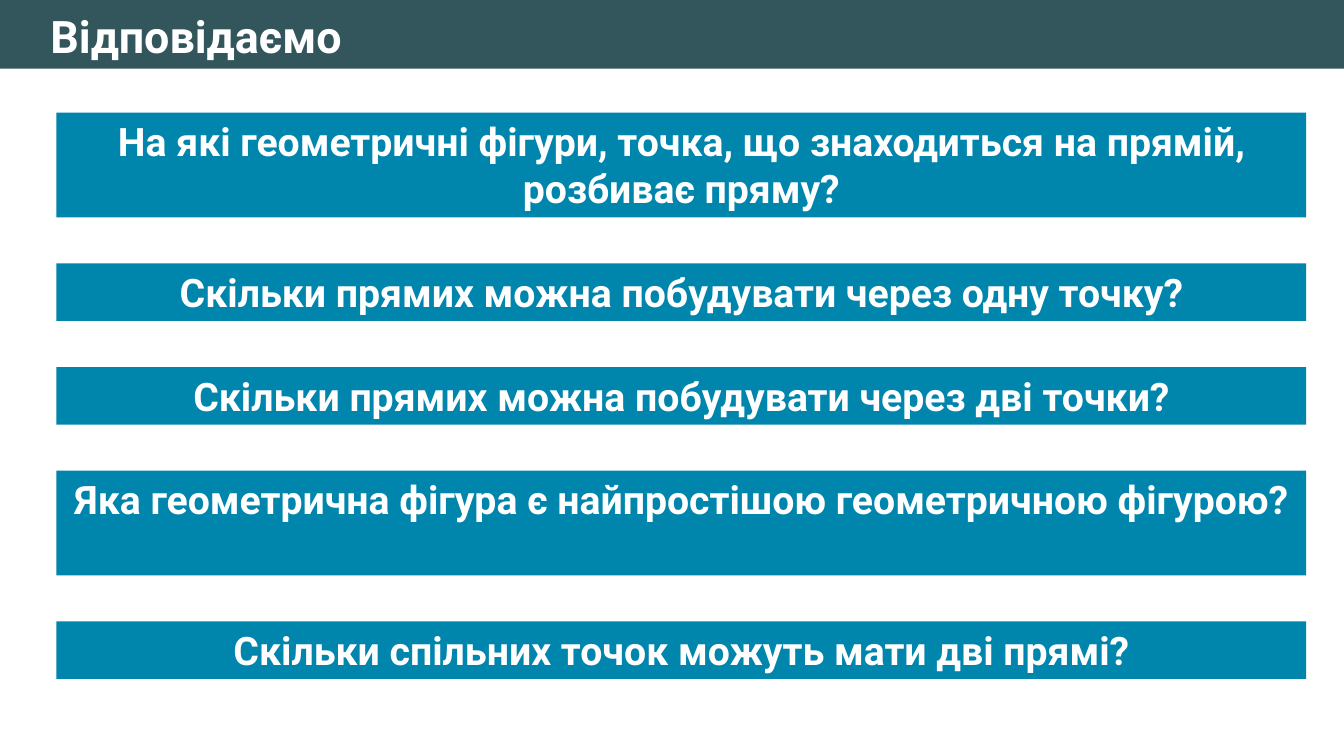
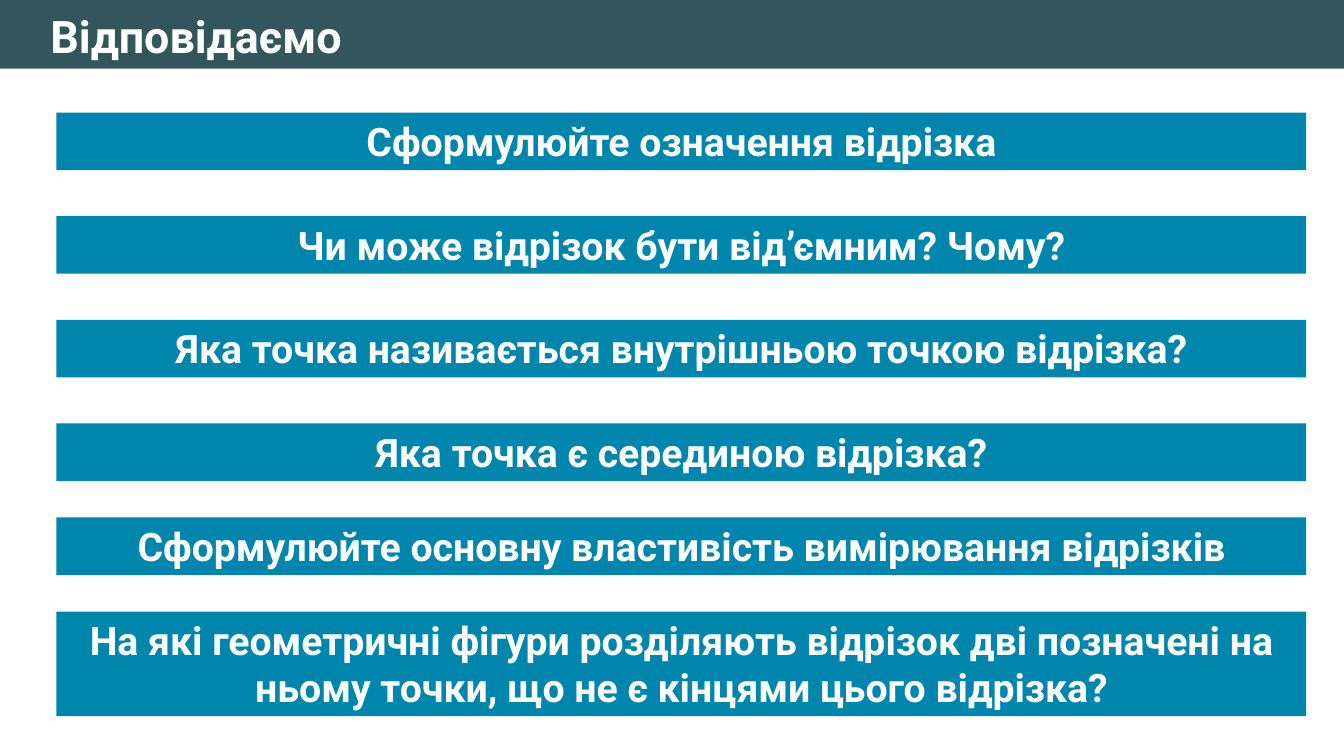
from pptx import Presentation
from pptx.dml.color import RGBColor
from pptx.enum.shapes import MSO_SHAPE as Shape
from pptx.enum.text import MSO_ANCHOR as Anchor, PP_ALIGN as Align
from pptx.util import Cm, Pt

TITLE = "Відповідаємо"
FONT = "Roboto"
WHITE, HEADER, CARD = "FFFFFF", "33565D", "0085AD"
SLIDE_WIDTH, SLIDE_HEIGHT = 33.87, 19.05
HEADER_HEIGHT = 1.73
CARD_LEFT, CARD_TOP, CARD_WIDTH = 1.42, 2.84, 31.5
CARD_PADDING, LINE_HEIGHT = 0.26, 1.19
WIDE_GAP, NARROW_GAP = 1.16, 0.92

# Each question: text, lines of card height, gap above
SLIDES = [
    [
        ("На які геометричні фігури, точка, що знаходиться на прямій, розбиває пряму?", 2, 0),
        ("Скільки прямих можна побудувати через одну точку?", 1, WIDE_GAP),
        ("Скільки прямих можна побудувати через дві точки?", 1, WIDE_GAP),
        ("Яка геометрична фігура є найпростішою геометричною фігурою?", 2, WIDE_GAP),
        ("Скільки спільних точок можуть мати дві прямі?", 1, WIDE_GAP),
    ],
    [
        ("Сформулюйте означення відрізка", 1, 0),
        ("Чи може відрізок бути від’ємним? Чому?", 1, WIDE_GAP),
        ("Яка точка називається внутрішньою точкою відрізка?", 1, WIDE_GAP),
        ("Яка точка є серединою відрізка?", 1, WIDE_GAP),
        ("Сформулюйте основну властивість вимірювання відрізків", 1, NARROW_GAP),
        ("На які геометричні фігури розділяють відрізок дві позначені на ньому точки, "
         "що не є кінцями цього відрізка?", 2, NARROW_GAP),
    ],
]


def color(value):
    return RGBColor.from_string(value)


def add_band(slide, left, top, width, height, fill):
    shape = slide.shapes.add_shape(Shape.RECTANGLE, Cm(left), Cm(top), Cm(width), Cm(height))
    shape.shadow.inherit = False
    shape.fill.solid()
    shape.fill.fore_color.rgb = color(fill)
    shape.line.fill.background()
    return shape


def write(shape, text, size, alignment):
    frame = shape.text_frame
    frame.word_wrap = True
    frame.vertical_anchor = Anchor.TOP
    paragraph = frame.paragraphs[0]
    paragraph.text = text
    paragraph.alignment = alignment
    font = paragraph.font
    font.name, font.size, font.bold = FONT, Pt(size), True
    font.color.rgb = color(WHITE)


def add_header(slide):
    add_band(slide, 0, 0, SLIDE_WIDTH, HEADER_HEIGHT, HEADER)
    title = slide.shapes.add_textbox(Cm(1.02), Cm(0.1), Cm(31.45), Cm(1.63))
    write(title, TITLE, 32, Align.LEFT)


def add_questions(slide, questions):
    top = CARD_TOP
    for text, lines, gap in questions:
        top += gap
        height = CARD_PADDING + lines * LINE_HEIGHT
        card = add_band(slide, CARD_LEFT, top, CARD_WIDTH, height, CARD)
        write(card, text, 28, Align.CENTER)
        top += height


def main():
    presentation = Presentation()
    presentation.slide_width = Cm(SLIDE_WIDTH)
    presentation.slide_height = Cm(SLIDE_HEIGHT)
    for questions in SLIDES:
        slide = presentation.slides.add_slide(presentation.slide_layouts[6])
        add_header(slide)
        add_questions(slide, questions)
    presentation.save("out.pptx")


if __name__ == "__main__":
    main()
